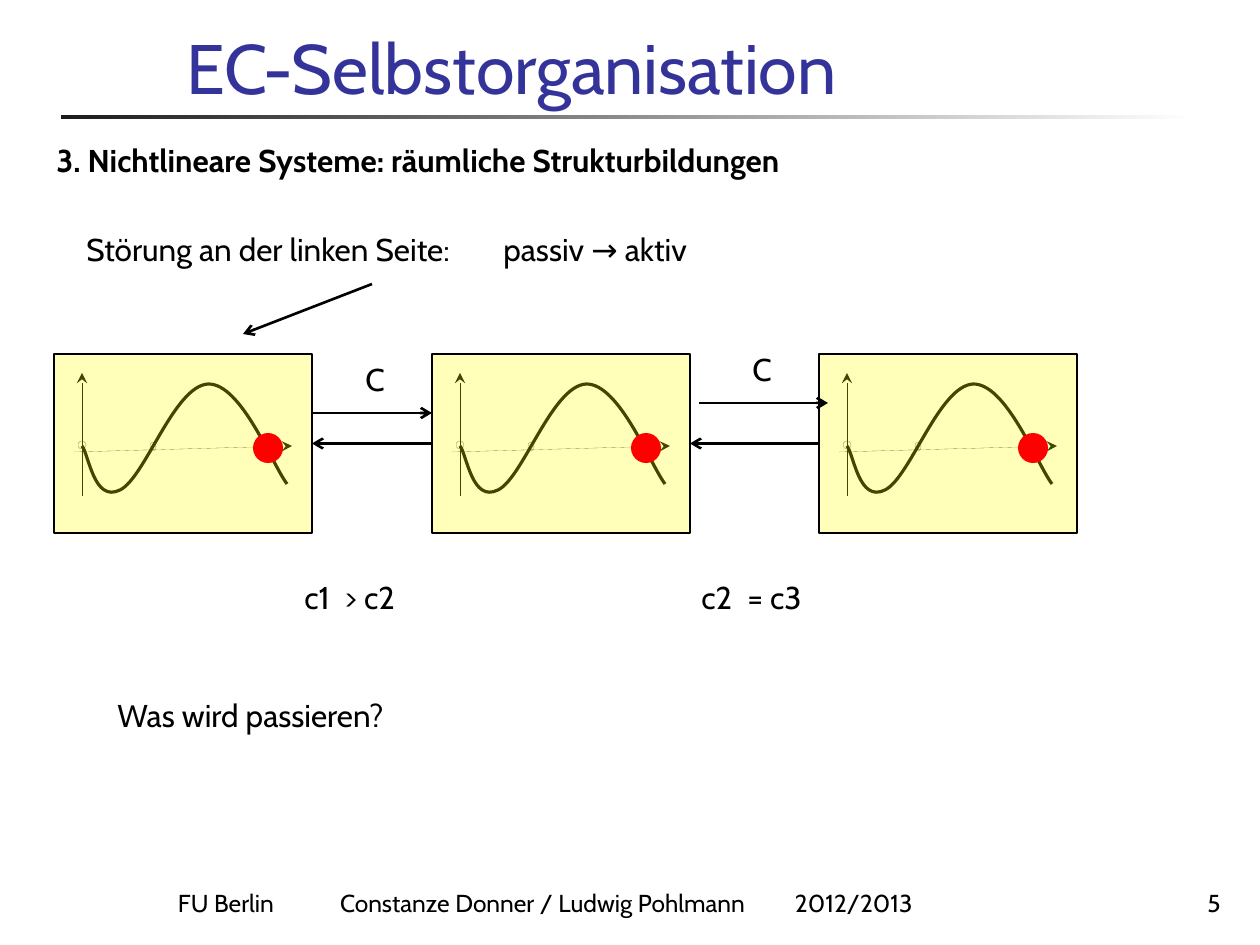
from lxml import etree
from pptx import Presentation
from pptx import util as u
from pptx.dml.color import RGBColor
from pptx.enum import shapes, text
from pptx.oxml.ns import qn

SCALE = u.Inches(1) / 126
FONT = "Cabin"
COLORS = {"title": "333399", "ink": "000000", "panel": "FFFF00", "dot": "FF0000",
          "rule_start": "1C1C1C", "rule_end": "FFFFFF"}
CURVE = [(28, 92), (35, 101), (40, 149), (66, 136), (91, 124), (120, 32),
         (154, 30), (187, 29), (218, 110), (233, 130)]
AXES = [(20, 98, 238, 92), (28, 142, 28, 19)]
MARKS = [(96, 88, 6, 9), (207, 90, 8, 8), (24, 87, 8, 8)]
PANELS = [(54, 354, 258, 179), (432, 354, 258, 179), (819, 354, 258, 179)]
LABELS = [
    ("3. Nichtlineare Systeme: räumliche Strukturbildungen", (44, 135, 887, 50), {"bold": True}, ()),
    ("C", (353, 354, 44, 50), {}, ()),
    ("C", (740, 344, 44, 50), {}, ()),
    ("Störung an der linken Seite:", (74, 224, 427, 50), {}, ()),
    ("passiv → aktiv", (491, 224, 229, 50), {}, ()),
    ("c1\t> c2", (292, 572, 158, 50), {}, (40,)),
    ("c2\t= c3", (689, 572, 152, 50), {}, (46,)),
    ("Was wird passieren?", (105, 690, 311, 50), {}, ()),
]


def px(*values):
    """Turn px lengths into EMU."""
    return [u.Emu(round(v * SCALE)) for v in values]


def rgb(name):
    """Return the named colour."""
    return RGBColor.from_string(COLORS[name])


def add_text(s, words, box, color="ink", tabs=(), frame=None, para=None, **font):
    """Add a one-line text box with optional tab stops."""
    tf = s.shapes.add_textbox(*px(*box)).text_frame
    p = tf.paragraphs[0]
    r = p.add_run()
    r.text = words
    r.font.color.rgb = rgb(color)
    formats = [(tf, {"word_wrap": bool(tabs), **(frame or {})}), (p, para or {}),
               (r.font, {"name": FONT, "size": u.Pt(18), **font})]
    for target, values in formats:
        for key, value in values.items():
            setattr(target, key, value)
    if tabs:
        stops = etree.SubElement(p._p.get_or_add_pPr(), qn("a:tabLst"))
        for pos in px(*tabs):
            etree.SubElement(stops, qn("a:tab"), pos=str(pos), algn="l")


def add_shape(parent, kind, box, fill=None, line=None):
    """Add a preset shape with an optional solid fill and outline."""
    sp = parent.add_shape(kind, *px(*box))
    sp.shadow.inherit = False
    if fill:
        sp.fill.solid()
        sp.fill.fore_color.rgb = rgb(fill)
    else:
        sp.fill.background()
    if line:
        sp.line.color.rgb = rgb("ink")
        sp.line.width = u.Pt(line)
    else:
        sp.line.fill.background()
    return sp


def add_arrow(parent, ends, head="arrow", width=1.5):
    """Add a straight line with an arrowhead at its end."""
    c = parent.add_connector(shapes.MSO_CONNECTOR.STRAIGHT, *px(*ends))
    c.line.color.rgb = rgb("ink")
    c.line.width = u.Pt(width)
    etree.SubElement(c.line._get_or_add_ln(), qn("a:tailEnd"), type=head)
    etree.SubElement(c._element.spPr, qn("a:effectLst"))
    return c


def add_curve(parent, x, y):
    """Add the cubic characteristic as a smooth outline."""
    points = [(x + dx, y + dy) for dx, dy in CURVE]
    fb = parent.build_freeform(*points[0], scale=SCALE)
    fb.add_line_segments(points[1:], close=False)
    sp = fb.convert_to_shape()
    sp.shadow.inherit = False
    sp.fill.background()
    sp.line.color.rgb = rgb("ink")
    sp.line.width = u.Pt(1.8)
    path = next(sp._element.iter(qn("a:path")))
    segments = path.findall(qn("a:lnTo"))
    for i in range(0, len(segments), 3):
        bezier = etree.SubElement(path, qn("a:cubicBezTo"))
        for segment in segments[i:i + 3]:
            bezier.append(segment[0])
            path.remove(segment)


def add_panel(s, box):
    """Add a grouped plot panel and return its frame."""
    x, y = box[:2]
    group = s.shapes.add_group_shape().shapes
    for x1, y1, x2, y2 in AXES:
        add_arrow(group, (x + x1, y + y1, x + x2, y + y2), "stealth", 0.05)
    for dx, dy, w, h in MARKS:
        add_shape(group, shapes.MSO_SHAPE.OVAL, (x + dx, y + dy, w, h), line=0.05)
    add_curve(group, x, y)
    frame = add_shape(group, shapes.MSO_SHAPE.RECTANGLE, box, "panel", 1)
    color = frame._element.spPr.find(qn("a:solidFill"))[0]
    etree.SubElement(color, qn("a:alpha"), val="27000")
    return frame


def add_diagram(s, boxes):
    """Add the panels, the exchange arrows between them and the state dots."""
    frames = [add_panel(s, box) for box in boxes]
    for ends in [(312, 413, 432, 413), (699, 403, 828, 403), (372, 284, 243, 334)]:
        add_arrow(s.shapes, ends)
    for left, right in zip(frames, frames[1:]):
        c = add_arrow(s.shapes, (0, 0, 0, 0))
        c.begin_connect(right, 1)
        c.end_connect(left, 3)
    for x, y, _, _ in boxes:
        add_shape(s.shapes, shapes.MSO_SHAPE.OVAL, (x + 199, y + 79, 30, 30), "dot")


def add_header(s, box):
    """Add the title and the fading rule below it."""
    x, y, w, h = box
    rule = add_shape(s.shapes, shapes.MSO_SHAPE.RECTANGLE, (x, y + h, w, 4))
    rule.fill.gradient()
    rule.fill.gradient_angle = 0
    for stop, name in zip(rule.fill.gradient_stops, ("rule_start", "rule_end")):
        stop.color.rgb = rgb(name)
    add_text(s, "EC-Selbstorganisation", (x + 113, y, 1058, h), "title",
             frame={"vertical_anchor": text.MSO_ANCHOR.BOTTOM}, size=u.Pt(40))


def add_footer(s, box):
    """Add the credits and the page number."""
    x, y, w, h = box
    bottom = {"vertical_anchor": text.MSO_ANCHOR.BOTTOM, "word_wrap": True}
    add_text(s, "FU Berlin\tConstanze Donner / Ludwig Pohlmann\t2012/2013", (x, y, 1002, h),
             tabs=(162, 617), frame={**bottom, "margin_left": px(134)[0]}, size=u.Pt(14))
    add_text(s, "5", (x + w - 166, y, 166, h), frame=bottom,
             para={"alignment": text.PP_ALIGN.RIGHT}, size=u.Pt(14))


def main():
    """Build and save the slide."""
    prs = Presentation()
    prs.slide_width, prs.slide_height = px(1260, 945)
    s = prs.slides.add_slide(prs.slide_layouts[6])
    add_header(s, (61, 29, 1134, 86))
    add_diagram(s, PANELS)
    for words, box, font, tabs in LABELS:
        add_text(s, words, box, tabs=tabs, **font)
    add_footer(s, (44, 861, 1189, 63))
    prs.save("out.pptx")


if __name__ == "__main__":
    main()
